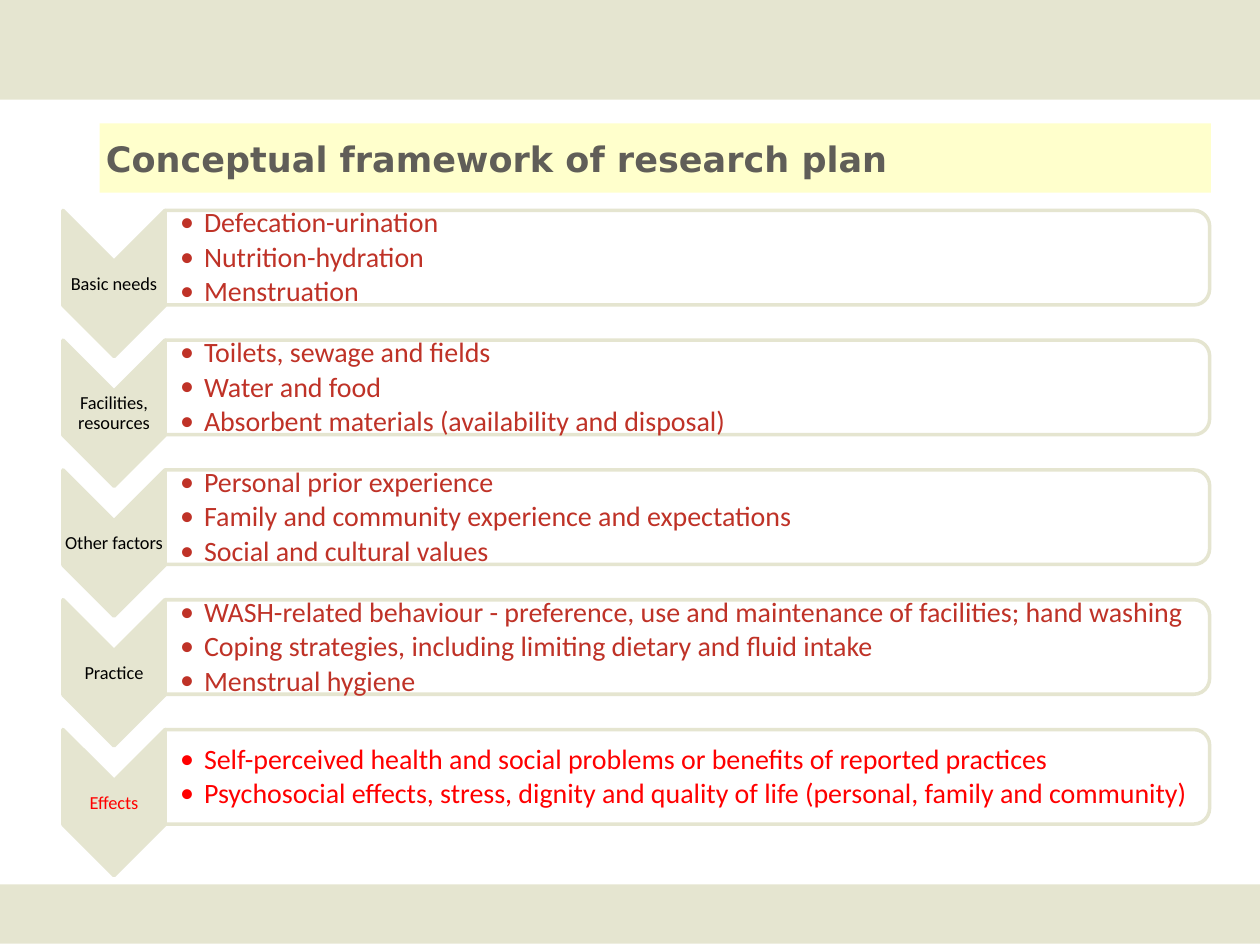
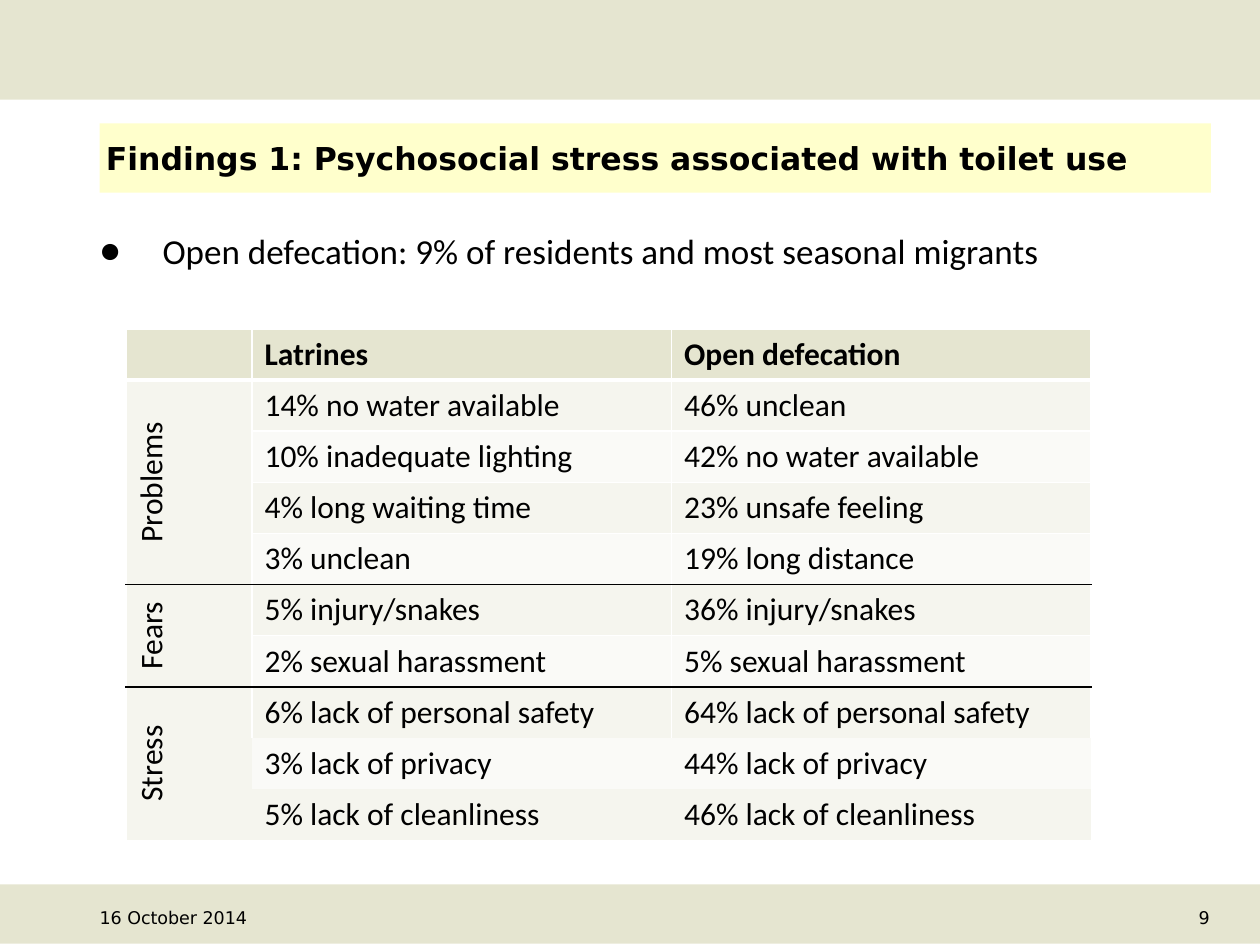
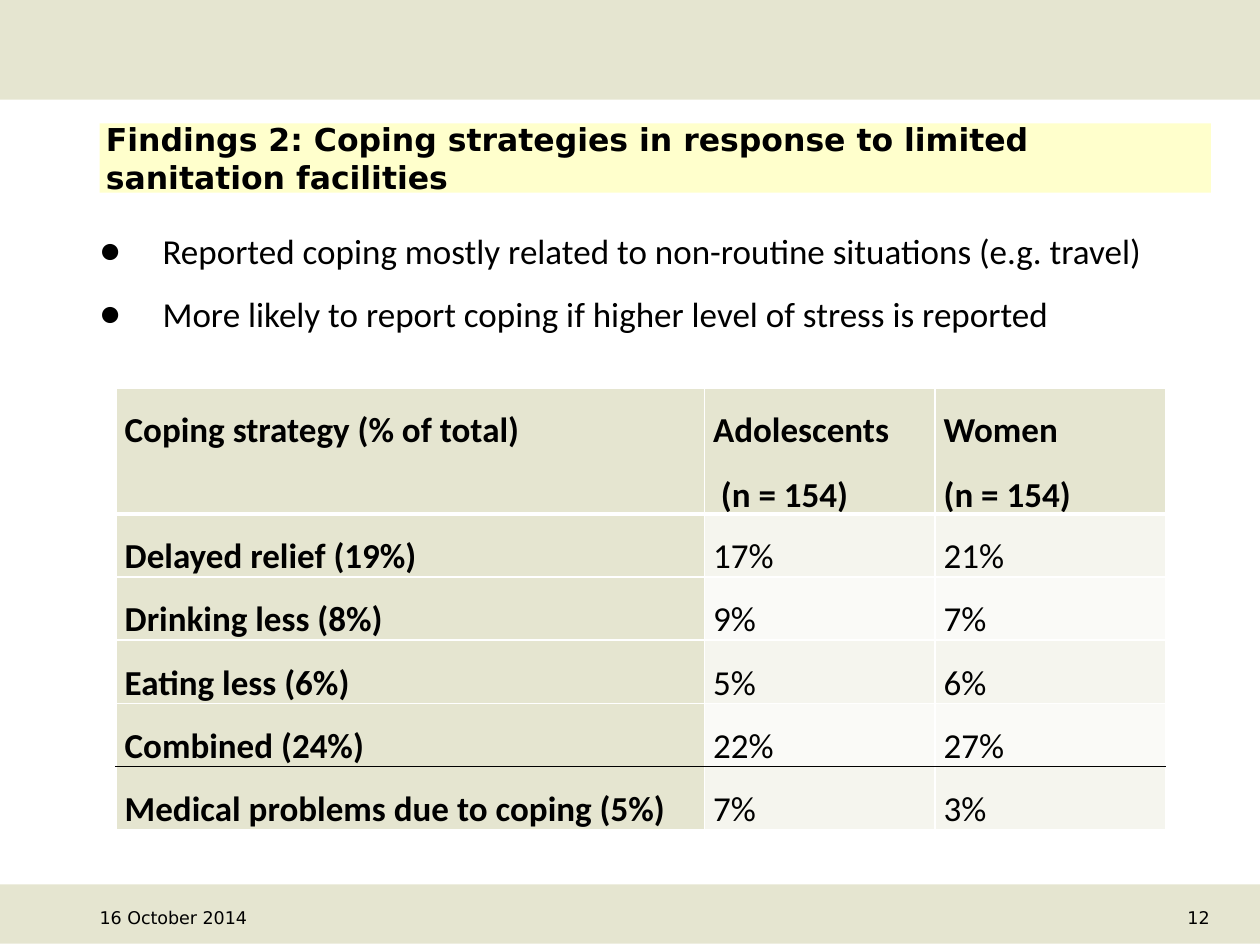
import pptx
import pptx.dml.color
import pptx.enum.shapes
import pptx.enum.text
import pptx.oxml.ns
import pptx.util
from lxml import etree

Inches, Pt = pptx.util.Inches, pptx.util.Pt
RGB = pptx.dml.color.RGBColor.from_string
Shape = pptx.enum.shapes.MSO_SHAPE
Align = pptx.enum.text.PP_ALIGN
Anchor = pptx.enum.text.MSO_ANCHOR
qn = pptx.oxml.ns.qn

COLORS = {"sand": "E5E5D0", "yellow": "FFFFCC", "white": "FFFFFF", "black": "000000",
          "grey": "605E58", "brick": "BF3227", "red": "FF0000",
          "odd row": "F5F5EE", "even row": "FAFAF7"}
BODY_FONT, HEAD_FONT = "Calibri", "DejaVu Sans"
WIDTH, HEIGHT = 10, 7.5
LEFT, CONTENT_WIDTH = 0.79, 8.82


def write_text(holder, text, size=18, color="black", font=BODY_FONT, bold=False,
               align=Align.LEFT, anchor=Anchor.TOP, margins=(0, 0, 0, 0),
               spacing=None, before=0, after=0, bullet=None, indent=0):
    """Fill a shape or table cell, one paragraph for each line of the text."""
    frame = holder.text_frame
    frame.word_wrap = True
    # A table cell keeps its own margins and anchor; a shape has them on its frame
    block = holder if hasattr(holder, "margin_left") else frame
    block.vertical_anchor = anchor
    (block.margin_left, block.margin_top,
     block.margin_right, block.margin_bottom) = map(Inches, margins)
    for number, line in enumerate(text.split("\n")):
        para = frame.add_paragraph() if number else frame.paragraphs[0]
        if bullet:
            properties = para._p.get_or_add_pPr()
            properties.set("marL", str(Inches(indent)))
            properties.set("indent", str(-Inches(indent)))
            etree.SubElement(properties, qn("a:buFont")).set("typeface", font)
            etree.SubElement(properties, qn("a:buChar")).set("char", bullet)
        para.alignment = align
        para.line_spacing = spacing
        para.space_before = Pt(before if number else 0)
        para.space_after = Pt(after)
        span = para.add_run()
        span.text = line
        span.font.size, span.font.bold, span.font.name = Pt(size), bold, font
        span.font.color.rgb = RGB(COLORS[color])


def set_borders(cell, **sides):
    """Give each side L, R, T, B a (color, points) pair, or None for no line."""
    properties = cell._tc.get_or_add_tcPr()
    for position, side in enumerate("LRTB"):
        line = etree.Element(qn(f"a:ln{side}"))
        if sides[side]:
            color, points = sides[side]
            line.set("w", str(Pt(points)))
            fill = etree.SubElement(line, qn("a:solidFill"))
            etree.SubElement(fill, qn("a:srgbClr")).set("val", COLORS[color])
        else:
            etree.SubElement(line, qn("a:noFill"))
        properties.insert(position, line)


deck = pptx.Presentation()
deck.slide_width, deck.slide_height = Inches(WIDTH), Inches(HEIGHT)
layout = deck.slide_layouts.get_by_name("Title Only")

titles = [
    ("Conceptual framework of research plan", 20, "grey", None),
    ("Findings 1: Psychosocial stress associated with toilet use", 18, "black", "9"),
    ("Findings 2: Coping strategies in response to limited sanitation facilities",
     18, "black", "12"),
]
pages = []
for heading, size, color, page_number in titles:
    page = deck.slides.add_slide(layout)
    pages.append(page)
    title = page.shapes.title
    title.left, title.top = Inches(LEFT), Inches(0.98)
    title.width, title.height = Inches(CONTENT_WIDTH), Inches(0.55)
    title.fill.solid()
    title.fill.fore_color.rgb = RGB(COLORS["yellow"])
    title.text_frame.auto_size = pptx.enum.text.MSO_AUTO_SIZE.NONE
    write_text(title, heading, size=size, color=color, font=HEAD_FONT, bold=True,
               anchor=Anchor.MIDDLE, margins=(0.05, 0.05, 0.05, 0.05))
    if page_number:
        footers = [("16 October 2014", LEFT, Align.LEFT), (page_number, 7.95, Align.RIGHT)]
        for text, left, align in footers:
            box = page.shapes.add_textbox(Inches(left), Inches(7.16), Inches(1.65), Inches(0.25))
            write_text(box, text, size=10, font=HEAD_FONT, align=align, anchor=Anchor.MIDDLE)

# Bands live on the shared layout, behind its placeholders
for top, height in [(0, 0.79), (7.02, 0.47)]:
    band = pages[0].shapes.add_shape(Shape.RECTANGLE, 0, Inches(top), Inches(WIDTH), Inches(height))
    band.shadow.inherit = False
    band.fill.solid()
    band.fill.fore_color.rgb = RGB(COLORS["sand"])
    band.line.fill.background()
    layout.shapes.element.insert(2, band.element)

# Framework: one chevron and one rounded panel for each step
steps = [
    ("Basic needs", "Defecation-urination\nNutrition-hydration\nMenstruation"),
    ("Facilities, resources", "Toilets, sewage and fields\nWater and food\n"
     "Absorbent materials (availability and disposal)"),
    ("Other factors", "Personal prior experience\n"
     "Family and community experience and expectations\nSocial and cultural values"),
    ("Practice", "WASH-related behaviour - preference, use and maintenance of facilities; "
     "hand washing\nCoping strategies, including limiting dietary and fluid intake\n"
     "Menstrual hygiene"),
    ("Effects", "Self-perceived health and social problems or benefits of reported practices\n"
     "Psychosocial effects, stress, dignity and quality of life "
     "(personal, family and community)"),
]
STEP_TOP, STEP_PITCH = 1.67, 1.03
CHEVRON_LEFT, CHEVRON_WIDTH, CHEVRON_HEIGHT = 0.5, 0.81, 1.16
PANEL_LEFT, PANEL_WIDTH, PANEL_HEIGHT = 1.31, 8.29, 0.75
shapes = pages[0].shapes
for number, (label, points) in enumerate(steps):
    top = STEP_TOP + number * STEP_PITCH
    is_last = number == len(steps) - 1
    outlines = [
        (Shape.CHEVRON, CHEVRON_LEFT, CHEVRON_WIDTH, CHEVRON_HEIGHT, "sand"),
        (Shape.ROUND_2_SAME_RECTANGLE, PANEL_LEFT, PANEL_WIDTH, PANEL_HEIGHT, "white"),
    ]
    for kind, left, width, height, fill in outlines:
        # A quarter turn swaps the sides around the shape's centre
        shape = shapes.add_shape(kind, Inches(left + (width - height) / 2),
                                 Inches(top + (height - width) / 2),
                                 Inches(height), Inches(width))
        shape.rotation = 90
        shape.shadow.inherit = False
        shape.fill.solid()
        shape.fill.fore_color.rgb = RGB(COLORS[fill])
        shape.line.color.rgb = RGB(COLORS["sand"])
        shape.line.width = Pt(2)
    box = shapes.add_textbox(Inches(CHEVRON_LEFT), Inches(top + 0.41),
                             Inches(CHEVRON_WIDTH), Inches(0.35))
    write_text(box, label, size=10.5, color="red" if is_last else "black",
               align=Align.CENTER, anchor=Anchor.MIDDLE, spacing=0.9,
               margins=(0.01, 0.01, 0.01, 0.01))
    box = shapes.add_textbox(Inches(PANEL_LEFT), Inches(top + 0.04),
                             Inches(PANEL_WIDTH - 0.03), Inches(0.68))
    write_text(box, points, size=16, color="red" if is_last else "brick",
               anchor=Anchor.MIDDLE, spacing=0.9, after=2.4, bullet="•", indent=0.19,
               margins=(0.12, 0.01, 0.01, 0.01))

# Findings: bullets above a table
stress_rows = [
    ["", "Latrines", "Open defecation"],
    ["Problems", "14% no water available", "46% unclean"],
    ["", "10% inadequate lighting", "42% no water available"],
    ["", "4% long waiting time", "23% unsafe feeling"],
    ["", "3% unclean", "19% long distance"],
    ["Fears", "5% injury/snakes", "36% injury/snakes"],
    ["", "2% sexual harassment", "5% sexual harassment"],
    ["Stress", "6% lack of personal safety", "64% lack of personal safety"],
    ["", "3% lack of privacy", "44% lack of privacy"],
    ["", "5% lack of cleanliness", "46% lack of cleanliness"],
]
coping_rows = [
    ["Coping strategy (% of total)", "Adolescents\n (n = 154)", "Women\n(n = 154)"],
    ["Delayed relief (19%)", "17%", "21%"],
    ["Drinking less (8%)", "9%", "7%"],
    ["Eating less (6%)", "5%", "6%"],
    ["Combined (24%)", "22%", "27%"],
    ["Medical problems due to coping (5%)", "7%", "3%"],
]
STRESS_ROW = 4.06 / len(stress_rows)
findings = [
    dict(page=pages[1], points="Open defecation: 9% of residents and most seasonal migrants",
         rows=stress_rows, left=1, top=2.61, columns=[1, 3.33, 3.33],
         header=STRESS_ROW, row=STRESS_ROW,
         groups={1: 4, 5: 2, 7: 3}, ruled=[4, 6], lined=8, bold_column=False,
         text=dict(size=18, margins=(0.1, 0.05, 0.1, 0.05))),
    dict(page=pages[2], points="Reported coping mostly related to non-routine situations "
         "(e.g. travel)\nMore likely to report coping if higher level of stress is reported",
         rows=coping_rows, left=0.92, top=3.08, columns=[4.67, 1.83, 1.83], header=1, row=0.5,
         groups={}, ruled=[4], lined=6, bold_column=True,
         text=dict(size=20, margins=(0.07, 0, 0.07, 0), spacing=1.5)),
]
for finding in findings:
    shapes, rows, columns = finding["page"].shapes, finding["rows"], finding["columns"]
    box = shapes.add_textbox(Inches(LEFT), Inches(1.82), Inches(CONTENT_WIDTH), Inches(4.88))
    write_text(box, finding["points"], size=20, before=6, after=6, bullet="●", indent=0.5)

    heights = [finding["header"]] + [finding["row"]] * (len(rows) - 1)
    table = shapes.add_table(len(rows), len(columns), Inches(finding["left"]),
                             Inches(finding["top"]), Inches(sum(columns)),
                             Inches(sum(heights))).table
    for column, width in zip(table.columns, columns):
        column.width = Inches(width)
    for row, height in zip(table.rows, heights):
        row.height = Inches(height)
    for first, count in finding["groups"].items():
        table.cell(first, 0).merge(table.cell(first + count - 1, 0))

    for r, values in enumerate(rows):
        for c, value in enumerate(values):
            cell = table.cell(r, c)
            in_group = c == 0 and bool(finding["groups"]) and r > 0
            strong = r == 0 or (c == 0 and finding["bold_column"])
            if value:
                write_text(cell, value, bold=strong,
                           align=Align.CENTER if in_group else Align.LEFT, **finding["text"])
            if in_group:
                cell._tc.get_or_add_tcPr().set("vert", "vert270")

            last = r + (finding["groups"].get(r, 1) if c == 0 else 1) - 1
            plain = ("white", 1) if r < finding["lined"] else None
            above = ("black", 1) if r - 1 in finding["ruled"] else plain
            below = ("black", 1) if last in finding["ruled"] else plain
            if r == 0:
                below = ("white", 3)
            elif r == 1:
                above = ("white", 3)
            set_borders(cell, L=plain, R=plain, T=above, B=below)
            shade = "sand" if strong else "odd row" if r % 2 or in_group else "even row"
            cell.fill.solid()
            cell.fill.fore_color.rgb = RGB(COLORS[shade])

deck.save("out.pptx")
